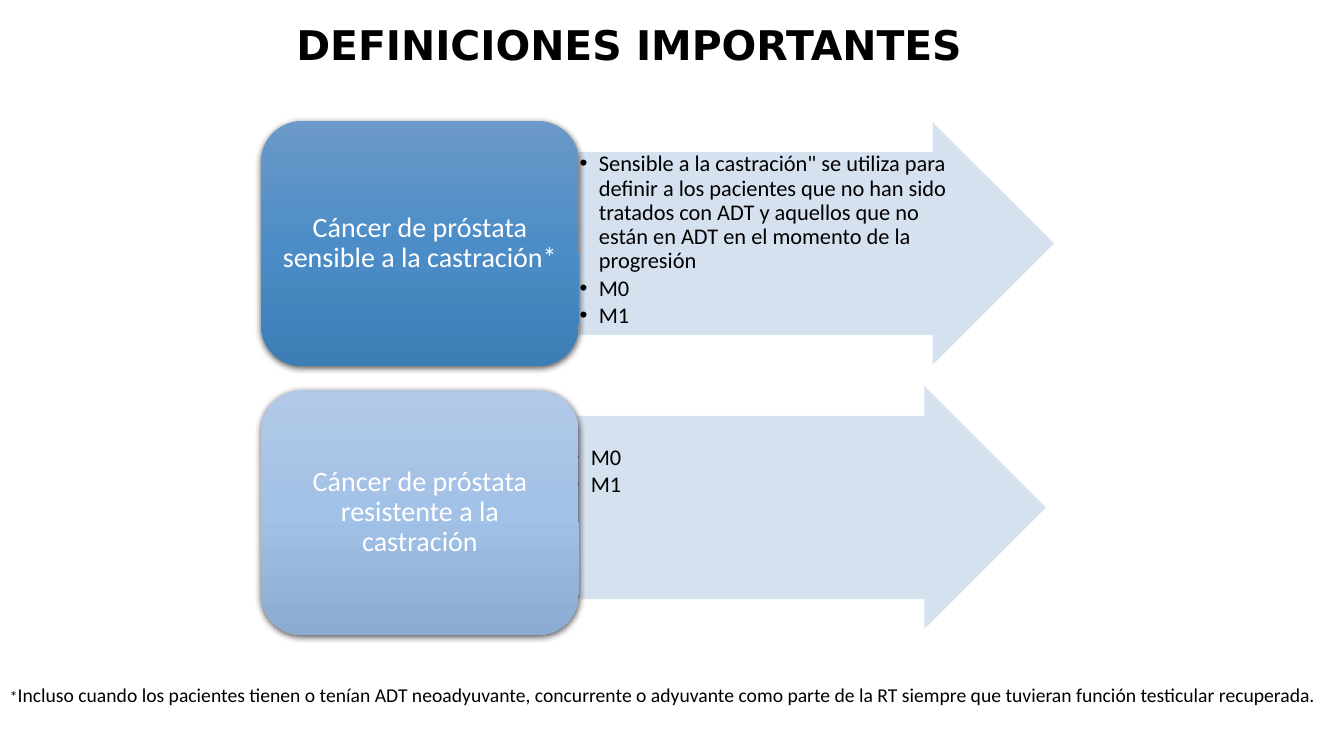
"""Build the slide of definitions for castration-sensitive and resistant prostate cancer."""
import pptx
import pptx.dml.color
import pptx.enum.shapes
import pptx.enum.text
import pptx.oxml
import pptx.oxml.ns
import pptx.util

HEADING = "DEFINICIONES IMPORTANTES"
DEFINITIONS = [
    {
        "term": "Cáncer de próstata sensible a la castración*",
        "points": [
            'Sensible a la castración" se utiliza para definir a los pacientes que no han sido '
            "tratados con ADT y aquellos que no están en ADT en el momento de la progresión",
            "M0",
            "M1",
        ],
        "shades": ["6B99C9", "4D8DC7", "3E7EB7"],
        "nudge": (0, 0),
        "top_inset": 0.01,
    },
    {
        "term": "Cáncer de próstata resistente a la castración",
        "points": ["M0", "M1"],
        "shades": ["B1C9E7", "A2C1E6", "8CABD1"],
        "nudge": (-0.08, -0.05),
        "top_inset": 0.3,
    },
]
FOOTNOTE = [
    ("*", "mark"),
    ("Incluso cuando los pacientes tienen o tenían ADT neoadyuvante, concurrente o adyuvante "
     "como parte de la RT siempre que tuvieran función testicular recuperada.", "note"),
]

THEME = {
    "colors": {"text": "000000", "light": "FFFFFF", "arrow": "D2DEEF"},
    "heading": {"name": "DejaVu Sans", "size": 29.2, "bold": True},
    "term": {"name": "Calibri", "size": 20},
    "point": {"name": "Calibri", "size": 16},
    "mark": {"name": "Calibri", "size": 11},
    "note": {"name": "Calibri", "size": 14},
}
WIDTH, HEIGHT = 13.33, 7.5
LEFT, TOP = 2.59, 1.2
TERM_WIDTH, ARROW_WIDTH = 3.15, 4.72
ROW_HEIGHT, ROW_GAP = 2.43, 0.24
INDENT = 0.19
MIDDLE = pptx.enum.text.MSO_ANCHOR.MIDDLE
SHAPES = pptx.enum.shapes.MSO_SHAPE


def rgb(value):
    return pptx.dml.color.RGBColor.from_string(value)


def inches(*values):
    return [pptx.util.Inches(value) for value in values]


def apply(target, values):
    for name, value in values.items():
        setattr(target, name, value)


def child(parent, tag, **attributes):
    element = pptx.oxml.ns.qn(tag)
    node = parent.makeelement(element, {key: str(value) for key, value in attributes.items()})
    parent.append(node)
    return node


def write(paragraph, text, style, color="text"):
    run = paragraph.add_run()
    run.text = text
    apply(run.font, {**THEME[style], "size": pptx.util.Pt(THEME[style]["size"])})
    run.font.color.rgb = rgb(THEME["colors"][color])


def frame_of(shape, margins, anchor):
    frame = shape.text_frame
    sides = ("margin_left", "margin_top", "margin_right", "margin_bottom")
    apply(frame, dict(zip(sides, inches(*margins))))
    apply(frame, {"word_wrap": True, "vertical_anchor": anchor})
    return frame


def add_arrow(slide, definition, row_top):
    shift_x, shift_y = definition["nudge"]
    arrow = slide.shapes.add_shape(SHAPES.RIGHT_ARROW, *inches(
        LEFT + TERM_WIDTH + shift_x, row_top + shift_y, ARROW_WIDTH, ROW_HEIGHT))
    arrow.adjustments[0] = 0.75
    arrow.shadow.inherit = False
    arrow.fill.solid()
    arrow.fill.fore_color.rgb = rgb(THEME["colors"]["arrow"])
    tint = arrow.fill._xPr.find(".//" + pptx.oxml.ns.qn("a:srgbClr"))
    child(tint, "a:alpha", val=90000)
    arrow.line.color.rgb = rgb(THEME["colors"]["light"])
    arrow.line.width = pptx.util.Pt(0.5)
    frame = frame_of(arrow, (0.01, definition["top_inset"], 0.01, 0.01),
                     pptx.enum.text.MSO_ANCHOR.TOP)
    for index, point in enumerate(definition["points"]):
        paragraph = frame.add_paragraph() if index else frame.paragraphs[0]
        apply(paragraph, {"level": 1, "line_spacing": 0.9, "space_after": pptx.util.Pt(2.4),
                          "alignment": pptx.enum.text.PP_ALIGN.LEFT})
        properties = paragraph._p.get_or_add_pPr()
        indent = pptx.util.Inches(INDENT)
        properties.set("marL", str(indent))
        properties.set("indent", str(-indent))
        child(properties, "a:buFont", typeface="Arial")
        child(properties, "a:buChar", char="•")
        write(paragraph, point, "point")


def add_term(slide, definition, row_top):
    term = slide.shapes.add_shape(
        SHAPES.ROUNDED_RECTANGLE, *inches(LEFT, row_top, TERM_WIDTH, ROW_HEIGHT))
    term.line.fill.background()
    term.fill.gradient()
    term.fill.gradient_angle = 270
    properties = term._element.spPr
    stops = properties.find(".//" + pptx.oxml.ns.qn("a:gsLst"))
    for stop in list(stops):
        stops.remove(stop)
    for index, shade in enumerate(definition["shades"]):
        child(child(stops, "a:gs", pos=index * 50000), "a:srgbClr", val=shade)
    term.shadow.inherit = False
    effects = properties.find(pptx.oxml.ns.qn("a:effectLst"))
    shadow = child(effects, "a:outerShdw", blurRad=pptx.util.Pt(4.5), dist=pptx.util.Pt(1.5),
                   dir=90 * 60000, algn="ctr", rotWithShape=0)
    child(child(shadow, "a:srgbClr", val=THEME["colors"]["text"]), "a:alpha", val=63000)
    paragraph = frame_of(term, (0.08, 0.04, 0.08, 0.04), MIDDLE).paragraphs[0]
    apply(paragraph, {"alignment": pptx.enum.text.PP_ALIGN.CENTER, "line_spacing": 0.9})
    write(paragraph, definition["term"], "term", "light")


def add_line(slide, box, runs, anchor, spacing):
    label = slide.shapes.add_textbox(*inches(*box))
    paragraph = frame_of(label, (0.1, 0.05, 0.1, 0.05), anchor).paragraphs[0]
    paragraph.line_spacing = spacing
    for text, style in runs:
        write(paragraph, text, style)


def main():
    deck = pptx.Presentation()
    deck.slide_width, deck.slide_height = inches(WIDTH, HEIGHT)
    slide = deck.slides.add_slide(deck.slide_layouts[6])
    for row, definition in enumerate(DEFINITIONS):
        row_top = TOP + row * (ROW_HEIGHT + ROW_GAP)
        add_arrow(slide, definition, row_top)
        add_term(slide, definition, row_top)
    add_line(slide, (0, 6.71, 13.18, 0.35), FOOTNOTE, pptx.enum.text.MSO_ANCHOR.TOP, 1.07)
    add_line(slide, (2.84, 0, 8.52, 0.94), [(HEADING, "heading")], MIDDLE, 0.9)
    deck.save("out.pptx")


if __name__ == "__main__":
    main()
